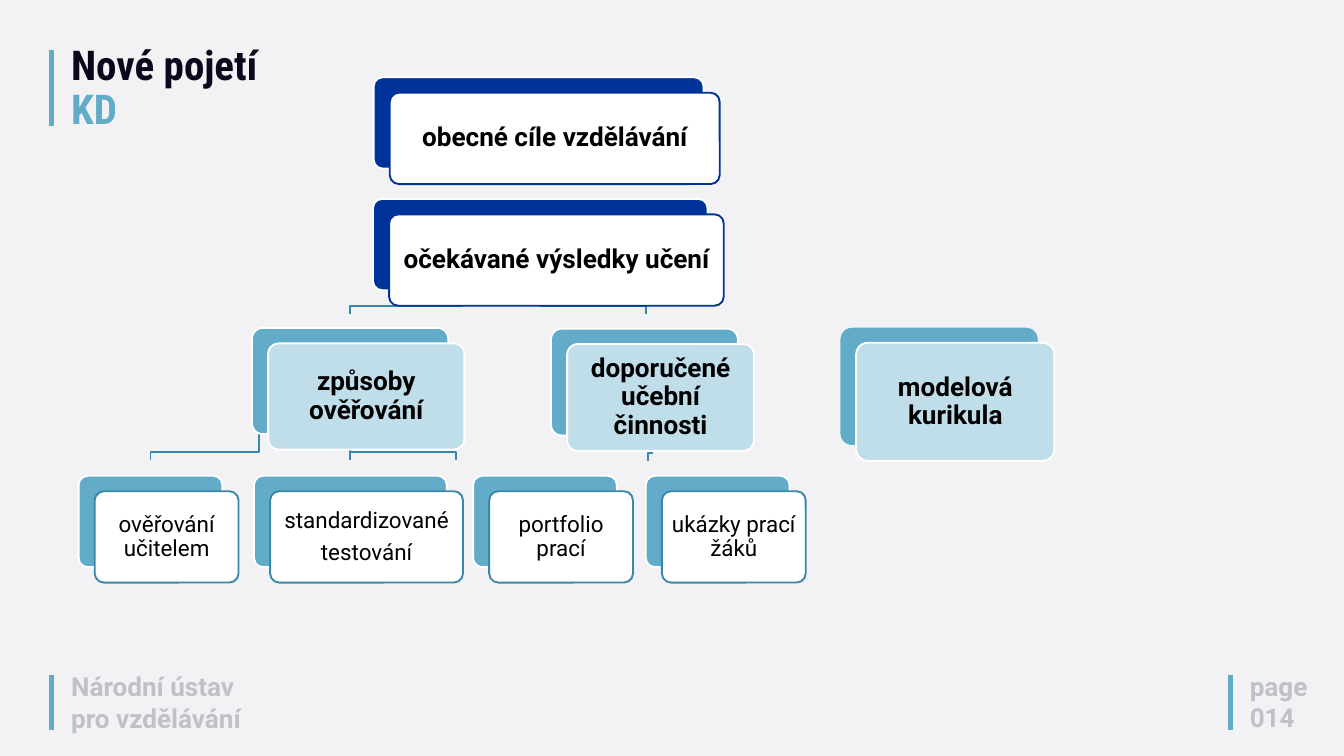
from pptx import Presentation
from pptx.dml.color import RGBColor
from pptx.enum.shapes import MSO_CONNECTOR, MSO_SHAPE
from pptx.enum.text import MSO_ANCHOR, PP_ALIGN
from pptx.oxml.ns import qn
from pptx.util import Inches, Pt
from lxml import etree

COLUMNS, ROWS = 20, 11.25
BACKGROUND, WHITE, BLACK = "F2F2F5", "FFFFFF", "000000"
NAVY, SKY, PALE, TEAL = "003399", "62ACC9", "C0DEE9", "3988A7"
INK, GREY = "0A091B", "C0C0C8"


def color(hex_string):
    return RGBColor.from_string(hex_string)


class Board:
    """Holds the style and the current slide; lengths are grid columns and rows."""

    font = "Roboto"
    title_font = "Roboto Condensed"
    card_offset = (0.24, 0.23)
    elbow_drop = 0.12

    def __init__(self, presentation):
        self.slide = presentation.slides.add_slide(presentation.slide_layouts[6])
        self.column = presentation.slide_width / COLUMNS
        self.row = presentation.slide_height / ROWS
        background = self.slide.background.fill
        background.solid()
        background.fore_color.rgb = color(BACKGROUND)

    def x(self, columns):
        return round(columns * self.column)

    def y(self, rows):
        return round(rows * self.row)

    def box(self, left, top, width, height):
        return self.x(left), self.y(top), self.x(width), self.y(height)

    def style_font(self, paragraph, size, hex_string, bold=True, name=None):
        font = paragraph.font
        font.name, font.size, font.bold = name or self.font, Pt(size), bold
        font.color.rgb = color(hex_string)

    def text_frame(self, *place):
        frame = self.slide.shapes.add_textbox(*self.box(*place)).text_frame
        frame.word_wrap = True
        return frame

    def line(self, start, end, hex_string, width):
        connector = self.slide.shapes.add_connector(
            MSO_CONNECTOR.STRAIGHT,
            self.x(start[0]), self.y(start[1]), self.x(end[0]), self.y(end[1]))
        connector.line.color.rgb = color(hex_string)
        connector.line.width = Pt(width)
        etree.SubElement(connector._element.spPr, qn("a:effectLst"))

    def accent(self, left, top, bottom):
        self.line((left, top), (left, bottom), SKY, 5)

    def elbow(self, start, end):
        bend = end[1] - self.elbow_drop
        builder = self.slide.shapes.build_freeform(self.x(start[0]), self.y(start[1]))
        corners = [(start[0], bend), (end[0], bend), end]
        builder.add_line_segments([(self.x(a), self.y(b)) for a, b in corners], close=False)
        shape = builder.convert_to_shape()
        shape.shadow.inherit = False
        shape.fill.background()
        shape.line.color.rgb = color(TEAL)
        shape.line.width = Pt(2)

    def title(self, first, second, *place):
        paragraph = self.text_frame(*place).paragraphs[0]
        paragraph.line_spacing = 0.9
        self.style_font(paragraph, 44, INK, name=self.title_font)
        paragraph.add_run().text = first
        paragraph.add_line_break()
        run = paragraph.add_run()
        run.text = second
        run.font.color.rgb = color(SKY)

    def footer(self, text, *place):
        frame = self.text_frame(*place)
        frame.text = text
        for paragraph in frame.paragraphs:
            self.style_font(paragraph, 28, GREY)

    def rounded(self, place, fill, outline, width=2):
        shape = self.slide.shapes.add_shape(MSO_SHAPE.ROUNDED_RECTANGLE, *self.box(*place))
        shape.adjustments[0] = 0.1
        shape.shadow.inherit = False
        shape.fill.solid()
        shape.fill.fore_color.rgb = color(fill)
        shape.line.color.rgb = color(outline)
        shape.line.width = Pt(width)
        return shape

    def card(self, text, place, back, front, outline, size=28, bold=True,
             back_outline=(WHITE, 2)):
        """A labelled card in front of a shifted backing plate."""
        left, top, width, height = place
        across, down = self.card_offset
        self.rounded((left - across, top - down, width, height), back, *back_outline)
        frame = self.rounded(place, front, outline).text_frame
        frame.word_wrap = True
        frame.vertical_anchor = MSO_ANCHOR.MIDDLE
        inset = Inches(0.12 if bold else 0.1)
        frame.margin_left = frame.margin_right = inset
        frame.margin_top = frame.margin_bottom = inset
        frame.text = text
        for paragraph in frame.paragraphs:
            paragraph.alignment = PP_ALIGN.CENTER
            paragraph.line_spacing = 0.9
            paragraph.space_after = Pt(size * 0.35)
            self.style_font(paragraph, size, BLACK, bold)


def main():
    presentation = Presentation()
    presentation.slide_width, presentation.slide_height = Inches(COLUMNS), Inches(ROWS)
    board = Board(presentation)

    # Title and footers with their accent bars
    board.accent(0.77, 0.75, 1.88)
    for left in (0.77, 18.31):
        board.accent(left, 10.05, 10.86)
    board.title("Nové pojetí", "KD", 0.96, 0.62, 9.04, 1.43)
    board.footer("Národní ústav pro vzdělávání", 0.96, 9.93, 3.04, 1.04)
    board.footer("page\n014", 18.5, 9.92, 1.9, 1.04)

    # Branches, behind the cards
    for start, end in [
        ((9.71, 6.48), (9.64, 6.86)),
        ((8.04, 4.32), (9.61, 4.67)),
        ((5.21, 6.46), (6.78, 6.85)),
        ((3.85, 6.46), (2.24, 6.85)),
        ((6.87, 4.32), (5.21, 4.67)),
    ]:
        board.elbow(start, end)
    board.line((5.21, 6.46), (5.21, 6.85), TEAL, 2)

    # Goals and outcomes
    for text, left, top, width in [
        ("očekávané výsledky učení", 5.79, 3.19, 4.98),
        ("obecné cíle vzdělávání", 5.8, 1.38, 4.91),
    ]:
        board.card(text, (left, top, width, 1.36), NAVY, WHITE, NAVY)

    # Middle level
    for text, place, back_outline in [
        ("způsoby ověřování", (3.99, 5.11, 2.92, 1.58), (WHITE, 2)),
        ("doporučené učební činnosti", (8.44, 5.12, 2.78, 1.59), (WHITE, 2)),
        ("modelová kurikula", (12.74, 5.1, 2.95, 1.76), (BACKGROUND, 1)),
    ]:
        board.card(text, place, SKY, PALE, WHITE, back_outline=back_outline)

    # Lowest level
    for text, left, width in [
        ("ověřování učitelem", 1.41, 2.14),
        ("standardizované\ntestování", 4.02, 2.87),
        ("portfolio prací", 7.28, 2.14),
        ("ukázky prací žáků", 9.85, 2.14),
    ]:
        board.card(text, (left, 7.31, width, 1.36), SKY, WHITE, TEAL, size=24, bold=False)

    presentation.save("out.pptx")


if __name__ == "__main__":
    main()
